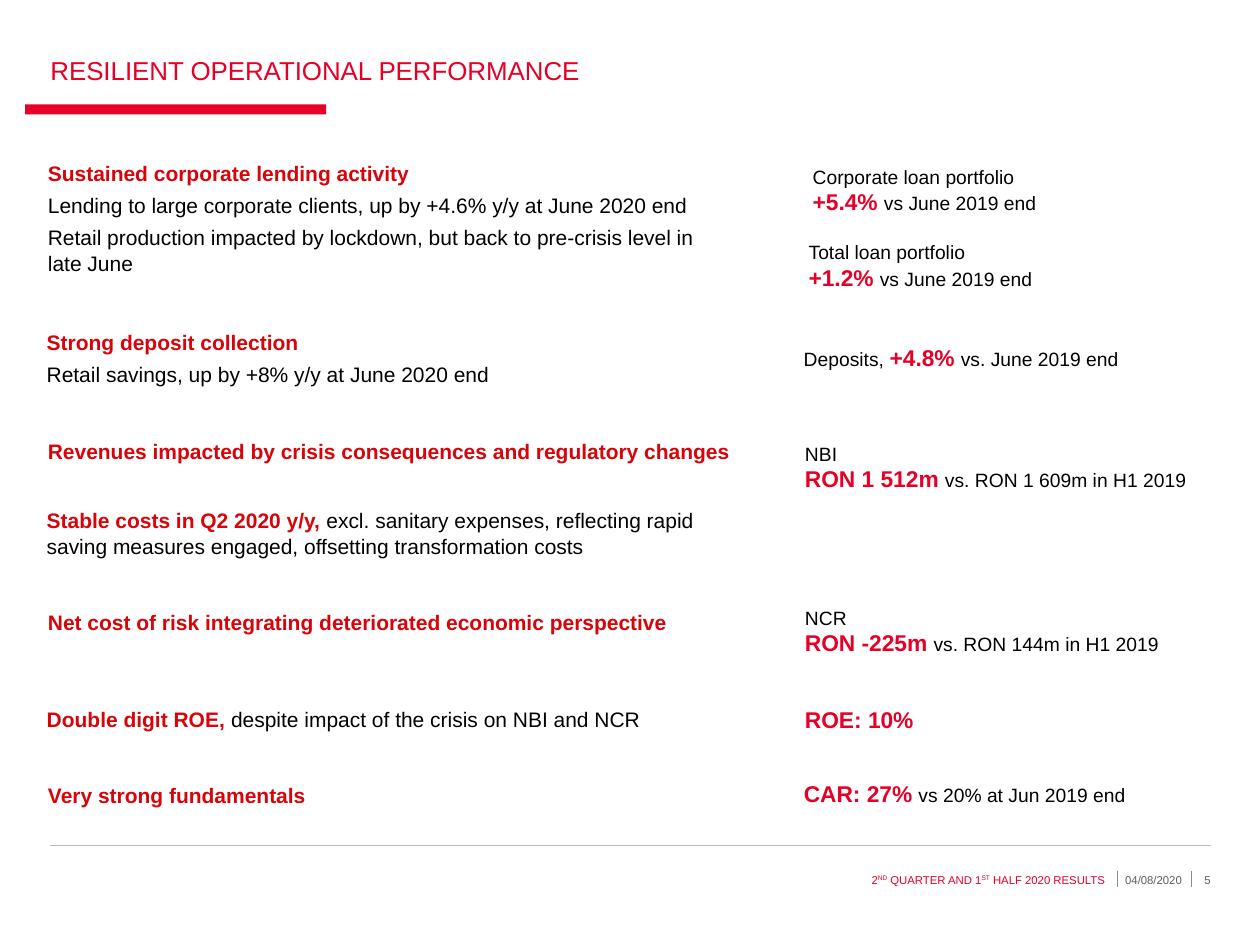
from dataclasses import dataclass

import pptx
import pptx.dml.color
import pptx.enum.shapes
import pptx.enum.text
import pptx.oxml.xmlchemy
import pptx.util

Pt = pptx.util.Pt
Align = pptx.enum.text.PP_ALIGN
Anchor = pptx.enum.text.MSO_ANCHOR


@dataclass(frozen=True)
class Style:
    size: float
    color: str
    bold: bool = False
    raised: bool = False


@dataclass(frozen=True)
class Theme:
    font: str = "Arial"
    accent: str = "E60028"
    rule: str = "C1BCBC"
    divider: str = "938B8B"
    title: Style = Style(14.8, "E60028")
    heading: Style = Style(12, "D80409", True)
    body: Style = Style(12, "000000")
    label: Style = Style(11, "000000")
    figure: Style = Style(13, "E60028", True)
    footer: Style = Style(6.5, "E60028")
    ordinal: Style = Style(6.5, "E60028", raised=True)
    footer_detail: Style = Style(6.5, "635C5C")


THEME = Theme()
Span = tuple[str, Style]
Lines = list[list[Span]]
Box = tuple[float, float, float, float]


@dataclass(frozen=True)
class Message:
    box: Box
    lines: Lines
    space_after: float = 3


@dataclass(frozen=True)
class KeyFigure:
    box: Box
    lines: Lines
    indent: float = 36
    insets: Box = (7.2, 3.6, 7.2, 3.6)


MESSAGES = [
    Message((24.5, 88.6, 391, 72), [
        [("Sustained corporate lending activity", THEME.heading)],
        [("Lending to large corporate clients, up by +4.6% y/y at June 2020 end", THEME.body)],
        [("Retail production impacted by lockdown, but back to pre-crisis level in late June",
          THEME.body)],
    ], space_after=4),
    Message((23.8, 185, 280, 38.9), [
        [("Strong deposit collection", THEME.heading)],
        [("Retail savings, up by +8% y/y at June 2020 end", THEME.body)],
    ], space_after=4),
    Message((24.5, 247.7, 401, 20.2), [
        [("Revenues impacted by crisis consequences and regulatory changes", THEME.heading)],
    ]),
    Message((23.8, 287.3, 391.7, 34.6), [
        [("Stable costs in Q2 2020 y/y, ", THEME.heading),
         ("excl. sanitary expenses, reflecting rapid saving measures engaged, "
          "offsetting transformation costs", THEME.body)],
    ]),
    Message((24.5, 345.6, 365.8, 20.2), [
        [("Net cost of risk integrating deteriorated economic perspective", THEME.heading)],
    ]),
    Message((23.8, 401, 365.8, 20.2), [
        [("Double digit ROE, ", THEME.heading),
         ("despite impact of the crisis on NBI and NCR", THEME.body)],
    ]),
    Message((24.5, 444.2, 370, 20.2), [[("Very strong fundamentals", THEME.heading)]]),
]

KEY_FIGURES = [
    KeyFigure((425.5, 91.4, 188, 51.8), [
        [("Corporate loan portfolio", THEME.label)],
        [("+5.4% ", THEME.figure), ("vs June 2019 end", THEME.label)],
    ], insets=(2.9, 2.9, 2.9, 2.9)),
    KeyFigure((419, 133.9, 252.7, 42.5), [
        [("Total loan portfolio", THEME.label)],
        [("+1.2% ", THEME.figure), ("vs June 2019 end", THEME.label)],
    ]),
    KeyFigure((452.2, 193, 198.7, 23), [
        [("Deposits, ", THEME.label), ("+4.8% ", THEME.figure),
         ("vs. June 2019 end", THEME.label)],
    ], indent=0),
    KeyFigure((416.9, 249.1, 270, 36), [
        [("NBI", THEME.label)],
        [("RON 1 512m ", THEME.figure), ("vs. RON 1 609m in H1 2019", THEME.label)],
    ]),
    KeyFigure((416.9, 342.7, 270, 36), [
        [("NCR", THEME.label)],
        [("RON -225m ", THEME.figure), ("vs. RON 144m in H1 2019", THEME.label)],
    ]),
    KeyFigure((416.9, 399.6, 270, 23), [[("ROE: 10%", THEME.figure)]]),
    KeyFigure((416.2, 442.1, 270, 23), [
        [("CAR: 27% ", THEME.figure), ("vs 20% at Jun 2019 end", THEME.label)],
    ]),
]

FOOTERS: list[tuple[Box, list[Span]]] = [
    ((492.5, 496.1, 139, 13), [
        ("2", THEME.footer), ("ND", THEME.ordinal), (" QUARTER AND 1", THEME.footer),
        ("ST", THEME.ordinal), (" HALF 2020 RESULTS", THEME.footer)]),
    ((640.1, 496.1, 35.3, 13), [("04/08/2020", THEME.footer_detail)]),
    ((681.8, 496.1, 10.1, 13), [("5", THEME.footer_detail)]),
]


def rgb(color: str) -> pptx.dml.color.RGBColor:
    return pptx.dml.color.RGBColor.from_string(color)


def place(shape, box: Box) -> None:
    shape.left, shape.top, shape.width, shape.height = map(Pt, box)


def write_text(shape, lines: Lines, *, insets: Box, anchor=Anchor.TOP, align=Align.LEFT,
               space_after: float = 0, indent: float = 0) -> None:
    frame = shape.text_frame
    frame.word_wrap = True
    frame.auto_size = pptx.enum.text.MSO_AUTO_SIZE.NONE
    frame.vertical_anchor = anchor
    frame.margin_left, frame.margin_top, frame.margin_right, frame.margin_bottom = map(Pt, insets)
    for number, spans in enumerate(lines):
        paragraph = frame.add_paragraph() if number else frame.paragraphs[0]
        paragraph.alignment = align
        paragraph.space_after = Pt(space_after)
        if indent:
            paragraph.level = 1
            paragraph._p.get_or_add_pPr().set("marL", str(Pt(indent)))
        for text, style in spans:
            run = paragraph.add_run()
            run.text = text
            run.font.name = THEME.font
            run.font.size = Pt(style.size)
            run.font.bold = style.bold
            run.font.color.rgb = rgb(style.color)
            if style.raised:
                run._r.get_or_add_rPr().set("baseline", "30000")


def add_text(slide, box: Box, lines: Lines, **text_format) -> None:
    write_text(slide.shapes.add_textbox(*map(Pt, box)), lines, **text_format)


def add_line(slide, start: tuple[float, float], end: tuple[float, float], color: str) -> None:
    line = slide.shapes.add_connector(
        pptx.enum.shapes.MSO_CONNECTOR.STRAIGHT, *map(Pt, start + end))
    line.line.color.rgb = rgb(color)
    line.line.width = Pt(0.5)
    line._element.spPr.append(pptx.oxml.xmlchemy.OxmlElement("a:effectLst"))


def main() -> None:
    presentation = pptx.Presentation()
    presentation.slide_width, presentation.slide_height = Pt(720), Pt(540)
    slide = presentation.slides.add_slide(presentation.slide_layouts[5])

    title = slide.shapes.title
    place(title, (28.8, 31, 663.1, 18))
    write_text(title, [[("RESILIENT OPERATIONAL PERFORMANCE", THEME.title)]],
               insets=(0, 0, 5, 0), anchor=Anchor.MIDDLE)

    title_bar = slide.shapes.add_shape(
        pptx.enum.shapes.MSO_SHAPE.RECTANGLE, *map(Pt, (14.4, 59.6, 172, 5.8)))
    title_bar.shadow.inherit = False
    title_bar.fill.solid()
    title_bar.fill.fore_color.rgb = rgb(THEME.accent)
    title_bar.line.fill.background()

    for message in MESSAGES:
        add_text(slide, message.box, message.lines, insets=(2.9, 2.9, 2.9, 2.9),
                 anchor=Anchor.MIDDLE, space_after=message.space_after)
    for figure in KEY_FIGURES:
        add_text(slide, figure.box, figure.lines, insets=figure.insets, indent=figure.indent)

    add_line(slide, (28.4, 483.1), (692, 483.1), THEME.rule)
    for divider_left in (638.6, 680.6):
        add_line(slide, (divider_left, 497.5), (divider_left, 506.9), THEME.divider)
    for box, spans in FOOTERS:
        add_text(slide, box, [spans], insets=(0, 2.9, 0, 2.9),
                 anchor=Anchor.MIDDLE, align=Align.RIGHT)

    presentation.save("out.pptx")


if __name__ == "__main__":
    main()
